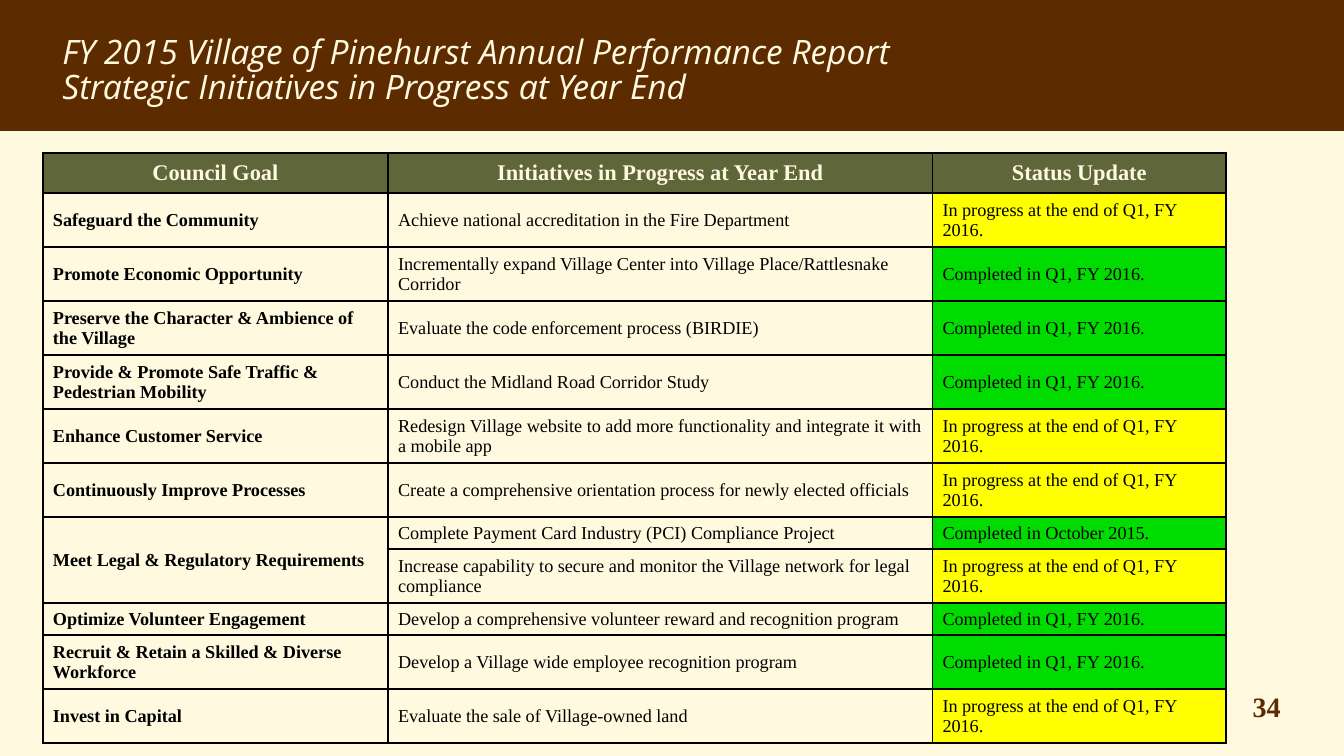
from lxml.etree import SubElement
from pptx import Presentation
from pptx.dml.color import RGBColor
from pptx.enum.shapes import MSO_SHAPE
from pptx.enum.text import MSO_ANCHOR, MSO_AUTO_SIZE, PP_ALIGN
from pptx.oxml.ns import qn
from pptx.util import Cm, Pt

BROWN = RGBColor(0x5D, 0x2B, 0x00)
CREAM = RGBColor(0xFF, 0xF9, 0xDF)
OLIVE = RGBColor(0x5E, 0x66, 0x3A)
YELLOW = RGBColor(0xFF, 0xFF, 0x00)
GREEN = RGBColor(0x00, 0xDC, 0x00)
BLACK = RGBColor(0x00, 0x00, 0x00)

TITLE = [
    "FY 2015 Village of Pinehurst Annual Performance Report",
    "Strategic Initiatives in Progress at Year End",
]
PAGE_NUMBER = "34"
HEADINGS = ["Council Goal", "Initiatives in Progress at Year End", "Status Update"]
ONGOING = "In progress at the end of Q1, FY 2016."
FINISHED = "Completed in Q1, FY 2016."
FINISHED_OCTOBER = "Completed in October 2015."
STATUS_COLORS = {ONGOING: YELLOW, FINISHED: GREEN, FINISHED_OCTOBER: GREEN}

TALL, SHORT = Cm(1.36), Cm(0.81)
GOALS = [
    ("Safeguard the Community", [
        ("Achieve national accreditation in the Fire Department", ONGOING, TALL)]),
    ("Promote Economic Opportunity", [
        ("Incrementally expand Village Center into Village Place/Rattlesnake Corridor", FINISHED, TALL)]),
    ("Preserve the Character & Ambience of the Village", [
        ("Evaluate the code enforcement process (BIRDIE)", FINISHED, TALL)]),
    ("Provide & Promote Safe Traffic & Pedestrian Mobility", [
        ("Conduct the Midland Road Corridor Study", FINISHED, TALL)]),
    ("Enhance Customer Service", [
        ("Redesign Village website to add more functionality and integrate it with a mobile app", ONGOING, TALL)]),
    ("Continuously Improve Processes", [
        ("Create a comprehensive orientation process for newly elected officials", ONGOING, TALL)]),
    ("Meet Legal & Regulatory Requirements", [
        ("Complete Payment Card Industry (PCI) Compliance Project", FINISHED_OCTOBER, SHORT),
        ("Increase capability to secure and monitor the Village network for legal compliance", ONGOING, TALL)]),
    ("Optimize Volunteer Engagement", [
        ("Develop a comprehensive volunteer reward and recognition program", FINISHED, SHORT)]),
    ("Recruit & Retain a Skilled & Diverse Workforce", [
        ("Develop a Village wide employee recognition program", FINISHED, TALL)]),
    ("Invest in Capital", [
        ("Evaluate the sale of Village-owned land", ONGOING, TALL)]),
]

HEADER_HEIGHT = Cm(1.02)
COLUMN_WIDTHS = [Cm(8.7), Cm(13.72), Cm(7.4)]
SERIF = "Times New Roman"
TITLE_FONT = {"name": "Open Sans", "size": Pt(24), "italic": True, "bold": False}
NUMBER_FONT = {"name": SERIF, "size": Pt(20), "bold": True}
HEADING_FONT = {"name": SERIF, "size": Pt(16), "bold": True}
GOAL_FONT = {"name": SERIF, "size": Pt(13), "bold": True}
BODY_FONT = {"name": SERIF, "size": Pt(13), "bold": False}


def write(para, text, font_format, color):
    span = para.add_run()
    span.text = text
    for name, value in font_format.items():
        setattr(span.font, name, value)
    span.font.color.rgb = color


def add_borders(cell):
    properties = cell._tc.get_or_add_tcPr()
    for side in ("lnL", "lnR", "lnT", "lnB"):
        line = SubElement(properties, qn(f"a:{side}"), w=str(Pt(1.5)))
        fill = SubElement(line, qn("a:solidFill"))
        SubElement(fill, qn("a:srgbClr"), val=str(BLACK))


def fill_cell(cell, text, font_format, color, fill, align=PP_ALIGN.LEFT):
    cell.fill.solid()
    cell.fill.fore_color.rgb = fill
    cell.vertical_anchor = MSO_ANCHOR.MIDDLE
    para = cell.text_frame.paragraphs[0]
    para.alignment = align
    write(para, text, font_format, color)


def add_banner(page):
    banner = page.shapes.add_shape(MSO_SHAPE.RECTANGLE, 0, 0, deck.slide_width, Cm(3.3))
    banner.shadow.inherit = False
    banner.fill.solid()
    banner.fill.fore_color.rgb = BROWN
    banner.line.fill.background()
    page.shapes._spTree.insert(2, banner._element)


def add_title(page):
    title = page.shapes.title
    title.left, title.top, title.width, title.height = Cm(1.32), Cm(0.64), Cm(31.22), Cm(2.31)
    frame = title.text_frame
    frame.word_wrap = True
    frame.auto_size = MSO_AUTO_SIZE.NONE
    frame.vertical_anchor = MSO_ANCHOR.MIDDLE
    for index, text in enumerate(TITLE):
        para = frame.add_paragraph() if index else frame.paragraphs[0]
        para.alignment = PP_ALIGN.LEFT
        para.line_spacing = 0.88
        para.space_before = Pt(0)
        write(para, text, TITLE_FONT, CREAM)


def add_page_number(page):
    box = page.shapes.add_textbox(Cm(31.32), Cm(17.25), Cm(1.75), Cm(1.12))
    box.text_frame.word_wrap = True
    write(box.text_frame.paragraphs[0], PAGE_NUMBER, NUMBER_FONT, BROWN)


def add_goal_table(page):
    heights = [HEADER_HEIGHT] + [height for _, items in GOALS for _, _, height in items]
    table = page.shapes.add_table(
        len(heights), len(HEADINGS), Cm(1.08), Cm(3.85), sum(COLUMN_WIDTHS), sum(heights)
    ).table
    table.horz_banding = False
    for column, width in zip(table.columns, COLUMN_WIDTHS):
        column.width = width
    for row, height in zip(table.rows, heights):
        row.height = height
    for cell in table.iter_cells():
        add_borders(cell)
    for index, heading in enumerate(HEADINGS):
        fill_cell(table.cell(0, index), heading, HEADING_FONT, CREAM, OLIVE, PP_ALIGN.CENTER)
    top = 1
    for goal, items in GOALS:
        goal_cell = table.cell(top, 0)
        if len(items) > 1:
            goal_cell.merge(table.cell(top + len(items) - 1, 0))
        fill_cell(goal_cell, goal, GOAL_FONT, BLACK, CREAM)
        for row, (initiative, status, _) in enumerate(items, top):
            fill_cell(table.cell(row, 1), initiative, BODY_FONT, BLACK, CREAM)
            fill_cell(table.cell(row, 2), status, BODY_FONT, BLACK, STATUS_COLORS[status])
        top += len(items)


deck = Presentation()
deck.slide_width, deck.slide_height = Cm(33.87), Cm(19.05)
page = deck.slides.add_slide(deck.slide_layouts[5])
page.background.fill.solid()
page.background.fill.fore_color.rgb = CREAM
add_banner(page)
add_page_number(page)
add_title(page)
add_goal_table(page)
deck.save("out.pptx")
